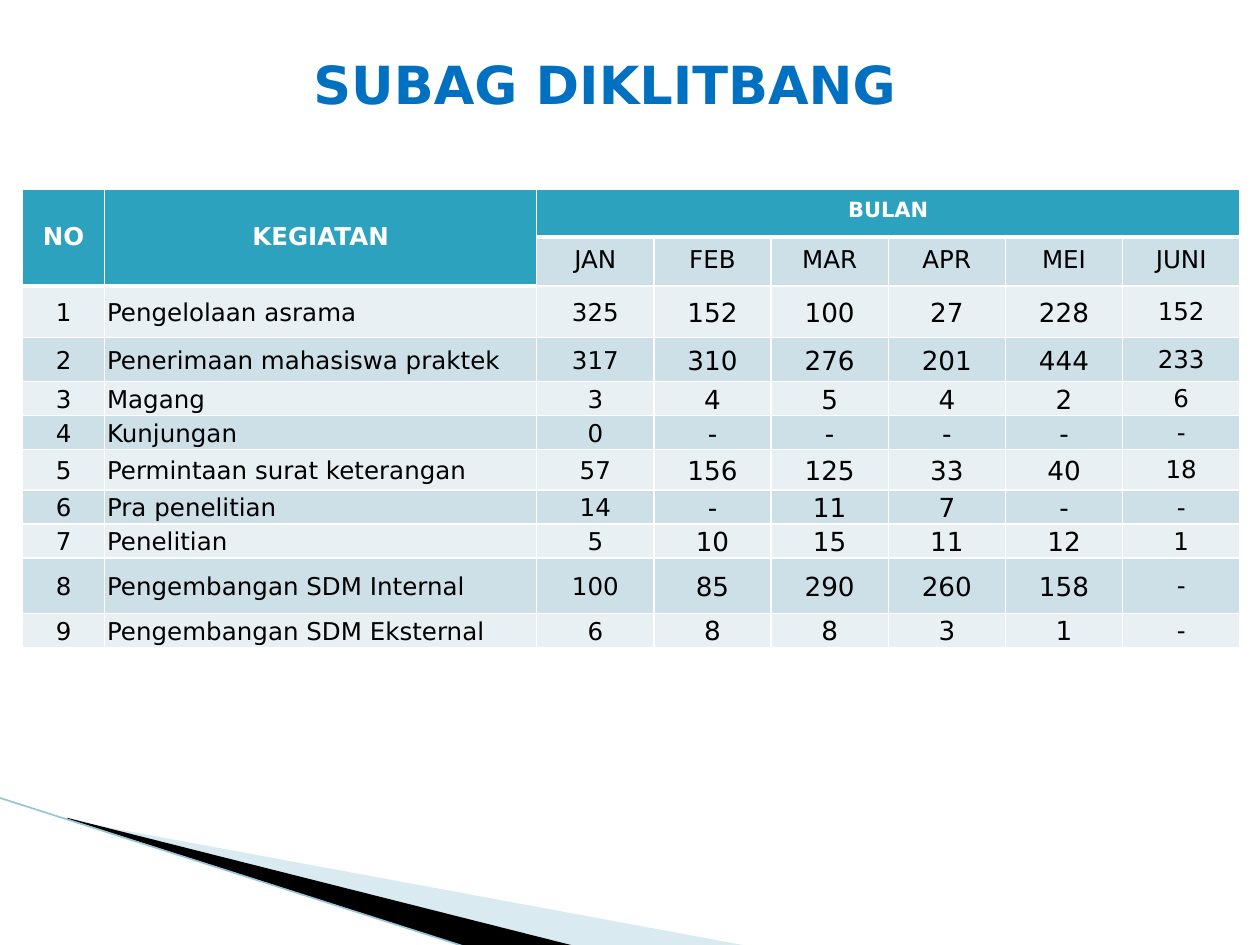
from dataclasses import dataclass

from lxml import etree
from pptx import Presentation
from pptx.dml.color import RGBColor
from pptx.enum import shapes, text
from pptx.oxml import ns
from pptx.util import Inches, Pt

FONT = "DejaVu Sans"
WHITE = RGBColor(0xFF, 0xFF, 0xFF)
BLACK = RGBColor(0x00, 0x00, 0x00)
TITLE_BLUE = RGBColor(0x00, 0x70, 0xC0)
HEADER_TEAL = RGBColor(0x2D, 0xA2, 0xBF)
DARK_BAND = RGBColor(0xCD, 0xE0, 0xE8)
LIGHT_BAND = RGBColor(0xE8, 0xF0, 0xF4)
SWOOSH_BLUE = RGBColor(0xA0, 0xCB, 0xDC)
EDGE_BLUE = RGBColor(0x97, 0xC5, 0xD8)

COLUMN_WIDTHS = [0.65, 3.43] + [0.93] * 6
ROW_HEIGHTS = [0.38, 0.39, 0.41, 0.35, 0.27, 0.27, 0.32, 0.27, 0.27, 0.44, 0.27]
MONTHS = ["JAN", "FEB", "MAR", "APR", "MEI", "JUNI"]
ACTIVITIES = [
    ("Pengelolaan asrama", "325 152 100 27 228 152"),
    ("Penerimaan mahasiswa praktek", "317 310 276 201 444 233"),
    ("Magang", "3 4 5 4 2 6"),
    ("Kunjungan", "0 - - - - -"),
    ("Permintaan surat keterangan", "57 156 125 33 40 18"),
    ("Pra penelitian", "14 - 11 7 - -"),
    ("Penelitian", "5 10 15 11 12 1"),
    ("Pengembangan SDM Internal", "100 85 290 260 158 -"),
    ("Pengembangan SDM Eksternal", "6 8 8 3 1 -"),
]


@dataclass(frozen=True)
class CellStyle:
    fill: RGBColor
    size: float = 14
    color: RGBColor = BLACK
    bold: bool = False
    align: text.PP_ALIGN = text.PP_ALIGN.CENTER
    anchor: text.MSO_ANCHOR = text.MSO_ANCHOR.MIDDLE
    insets: tuple = (0.02, 0.02, 0.02, 0)
    bottom_border: float = 1


@dataclass(frozen=True)
class Wedge:
    points: tuple
    fill: RGBColor
    opacity: int = 100


WEDGES = [
    Wedge(((0.55, 6.51), (5.95, 7.51), (4.56, 7.51), (0.55, 6.5)), SWOOSH_BLUE, 40),
    Wedge(((0.53, 6.49), (4.57, 7.51), (3.72, 7.52), (0.54, 6.5)), BLACK),
]
HEADER_INSETS = (0.15, 0.07, 0.15, 0.07)


def write(paragraph, content: str, size: float, color: RGBColor, bold: bool, align) -> None:
    paragraph.text = content
    paragraph.alignment = align
    font = paragraph.runs[0].font
    font.name, font.size, font.bold = FONT, Pt(size), bold
    font.color.rgb = color


def set_borders(cell, bottom_width: float) -> None:
    properties = cell._tc.get_or_add_tcPr()
    widths = {"a:lnL": 1, "a:lnR": 1, "a:lnT": 1, "a:lnB": bottom_width}
    for position, (tag, width) in enumerate(widths.items()):
        border = etree.Element(ns.qn(tag), w=str(Pt(width)))
        fill = etree.SubElement(border, ns.qn("a:solidFill"))
        etree.SubElement(fill, ns.qn("a:srgbClr"), val=str(WHITE))
        properties.insert(position, border)


def style_cell(cell, style: CellStyle, content: str = "") -> None:
    cell.fill.solid()
    cell.fill.fore_color.rgb = style.fill
    set_borders(cell, style.bottom_border)
    cell.vertical_anchor = style.anchor
    (cell.margin_left, cell.margin_top,
     cell.margin_right, cell.margin_bottom) = map(Inches, style.insets)
    if content:
        write(cell.text_frame.paragraphs[0], content, style.size, style.color,
              style.bold, style.align)


def draw_wedge(slide, wedge: Wedge) -> None:
    start, *rest = [(Inches(x), Inches(y)) for x, y in wedge.points]
    builder = slide.shapes.build_freeform(*start)
    builder.add_line_segments(rest, close=True)
    shape = builder.convert_to_shape()
    shape.shadow.inherit = False
    shape.line.fill.background()
    shape.fill.solid()
    shape.fill.fore_color.rgb = wedge.fill
    if wedge.opacity < 100:
        color = shape.fill._xPr.find(".//" + ns.qn("a:srgbClr"))
        etree.SubElement(color, ns.qn("a:alpha"), val=str(wedge.opacity * 1000))


def draw_edge(slide) -> None:
    edge = slide.shapes.add_connector(shapes.MSO_CONNECTOR.STRAIGHT, Inches(-0.01),
                                      Inches(6.33), Inches(3.71), Inches(7.52))
    edge.line.color.rgb = EDGE_BLUE
    edge.line.width = Pt(0.95)
    etree.SubElement(edge._element.spPr, ns.qn("a:effectLst"))


def draw_title(slide) -> None:
    title = slide.shapes.add_textbox(Inches(1.33), Inches(0.25), Inches(6.94), Inches(0.83))
    frame = title.text_frame
    frame.word_wrap = True
    frame.vertical_anchor = text.MSO_ANCHOR.MIDDLE
    write(frame.paragraphs[0], "SUBAG DIKLITBANG", 30, TITLE_BLUE, True, text.PP_ALIGN.CENTER)


def fill_header(table) -> None:
    """Two header rows: NO and KEGIATAN span both, BULAN spans the months."""
    def heading(size: float, anchor) -> CellStyle:
        return CellStyle(HEADER_TEAL, size, WHITE, True, anchor=anchor,
                         insets=HEADER_INSETS, bottom_border=3)

    tall = heading(14, text.MSO_ANCHOR.MIDDLE)
    wide = heading(12, text.MSO_ANCHOR.TOP)
    for column, label in enumerate(["NO", "KEGIATAN"]):
        table.cell(0, column).merge(table.cell(1, column))
        style_cell(table.cell(0, column), tall, label)
        style_cell(table.cell(1, column), tall)
    table.cell(0, 2).merge(table.cell(0, 7))
    month_style = CellStyle(DARK_BAND, anchor=text.MSO_ANCHOR.TOP, insets=HEADER_INSETS)
    for column, month in enumerate(MONTHS, start=2):
        style_cell(table.cell(0, column), wide, "BULAN" if column == 2 else "")
        style_cell(table.cell(1, column), month_style, month)


def fill_activities(table) -> None:
    for number, (activity, counts) in enumerate(ACTIVITIES, start=1):
        band = LIGHT_BAND if number % 2 else DARK_BAND
        plain = CellStyle(band)
        larger = CellStyle(band, size=15)
        styles = [plain, CellStyle(band, align=text.PP_ALIGN.LEFT), plain,
                  *[larger] * 4, CellStyle(band, insets=(0.01, 0.01, 0.01, 0))]
        values = [str(number), activity, *counts.split()]
        for column, (style, value) in enumerate(zip(styles, values)):
            style_cell(table.cell(number + 1, column), style, value)


def draw_table(slide) -> None:
    table = slide.shapes.add_table(len(ROW_HEIGHTS), len(COLUMN_WIDTHS), Inches(0.18),
                                   Inches(1.5), Inches(9.64), Inches(3.63)).table
    for column, width in zip(table.columns, COLUMN_WIDTHS):
        column.width = Inches(width)
    for row, height in zip(table.rows, ROW_HEIGHTS):
        row.height = Inches(height)
    fill_header(table)
    fill_activities(table)


def main() -> None:
    deck = Presentation()
    deck.slide_width, deck.slide_height = Inches(10), Inches(7.5)
    slide = deck.slides.add_slide(deck.slide_layouts[6])
    for wedge in WEDGES:
        draw_wedge(slide, wedge)
    draw_edge(slide)
    draw_table(slide)
    draw_title(slide)
    deck.save("out.pptx")


if __name__ == "__main__":
    main()
